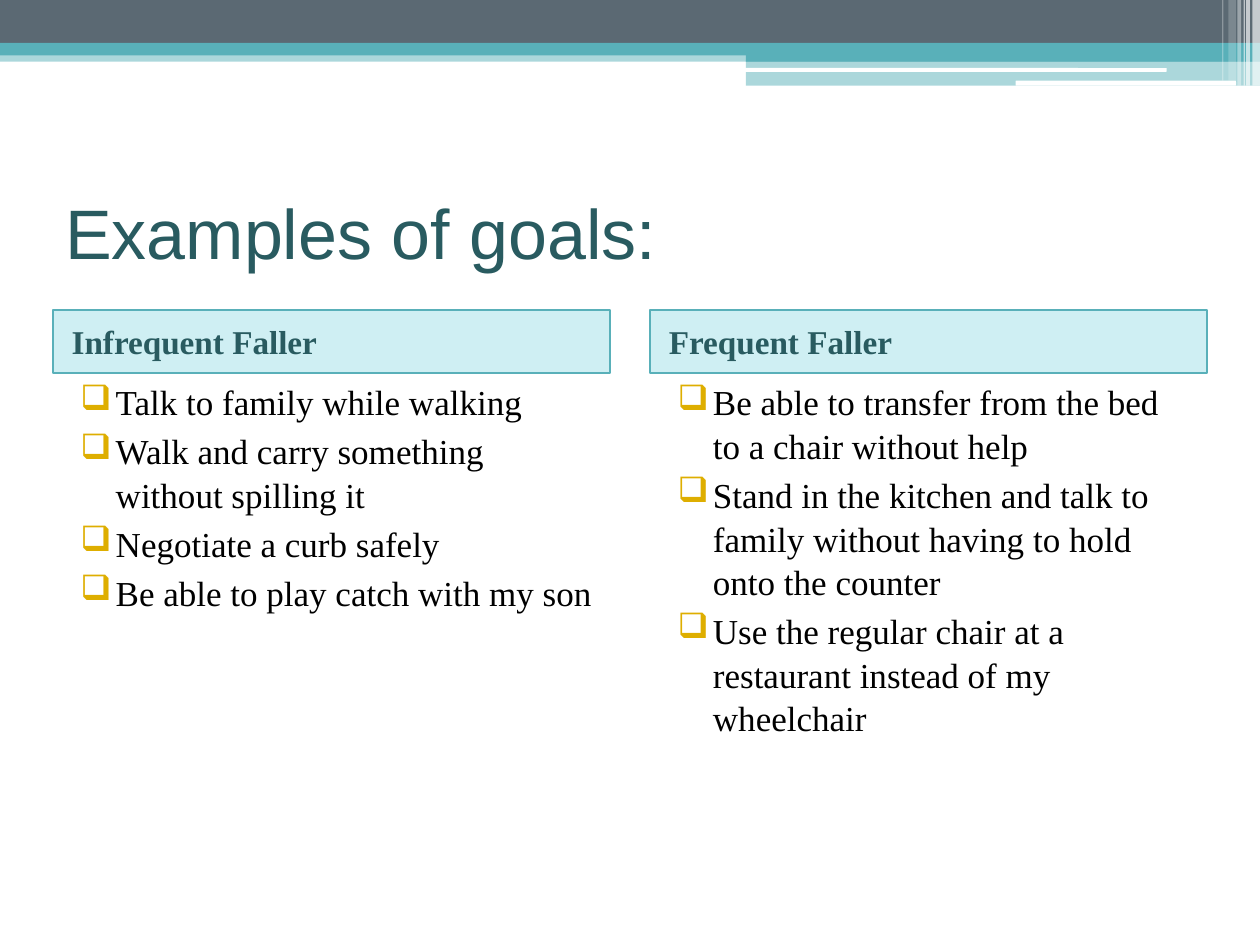
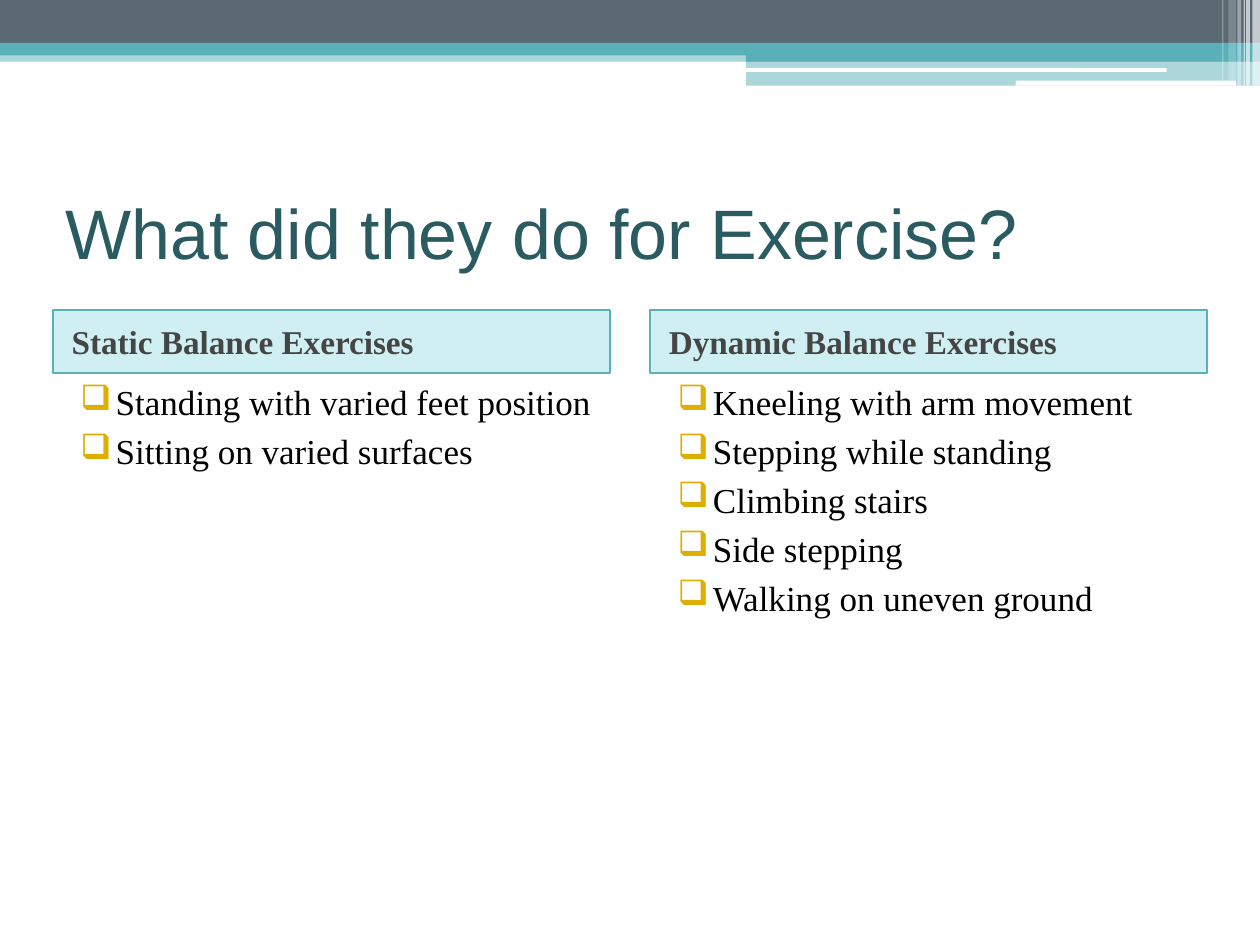
from lxml.etree import SubElement
from pptx import Presentation
from pptx.dml.color import RGBColor
from pptx.enum.shapes import MSO_SHAPE as SHAPE
from pptx.enum.text import MSO_ANCHOR as ANCHOR, PP_ALIGN as ALIGN
from pptx.oxml.ns import qn
from pptx.util import Inches, Pt

# Shared look
SLATE, TEAL, DARK_TEAL, AQUA = "5B6973", "59B0B9", "295B60", "41C3D1"
GOLD, GREY, BLACK, WHITE = "DEAE00", "454545", "000000", "FFFFFF"
SANS, SERIF = "Arial", "Times New Roman"
LEFT, COLUMN_WIDTH, COLUMN_STEP = 0.42, 4.42, 4.74

# Top bands, back to front: kind, left, top, width, height, colour, opacity %
BANDS = [
    (SHAPE.RECTANGLE, 0, 0.4, 10, 0.09, TEAL, 50),
    (SHAPE.RECTANGLE, 0, 0, 10, 0.34, SLATE, 100),
    (SHAPE.RECTANGLE, 0, 0.34, 10, 0.1, TEAL, 100),
    (SHAPE.RECTANGLE, 5.92, 0.39, 4.08, 0.1, TEAL, 100),
    (SHAPE.RECTANGLE, 5.92, 0.48, 4.08, 0.2, TEAL, 50),
    (SHAPE.ROUNDED_RECTANGLE, 5.91, 0.54, 3.35, 0.03, WHITE, 100),
    (SHAPE.ROUNDED_RECTANGLE, 8.06, 0.64, 1.75, 0.04, WHITE, 100),
]
# Pale stripes in the corner: left, width, height, opacity %
STRIPES = [(9.94, 0.06, 0.68, 65), (9.89, 0.03, 0.68, 65), (9.87, 0.01, 0.68, 60),
           (9.82, 0.03, 0.68, 40), (9.75, 0.06, 0.64, 20), (9.7, 0.01, 0.64, 30)]
BANDS += [(SHAPE.RECTANGLE, left, 0, width, height, WHITE, opacity)
          for left, width, height, opacity in STRIPES]

# Title, heading colour, columns of heading and points
SLIDES = [
    ("Examples of goals:", DARK_TEAL, [
        ("Infrequent Faller", [
            "Talk to family while walking",
            "Walk and carry something without spilling it",
            "Negotiate a curb safely",
            "Be able to play catch with my son"]),
        ("Frequent Faller", [
            "Be able to transfer from the bed to a chair without help",
            "Stand in the kitchen and talk to family without having to hold onto the counter",
            "Use the regular chair at a restaurant instead of my wheelchair"]),
    ]),
    ("What did they do for Exercise?", GREY, [
        ("Static Balance Exercises", [
            "Standing with varied feet position",
            "Sitting on varied surfaces"]),
        ("Dynamic Balance Exercises", [
            "Kneeling with arm movement",
            "Stepping while standing",
            "Climbing stairs",
            "Side stepping",
            "Walking on uneven ground"]),
    ]),
]


def add_block(slide, kind, left, top, width, height, color, opacity):
    block = slide.shapes.add_shape(kind, Inches(left), Inches(top), Inches(width), Inches(height))
    block.shadow.inherit = False
    block.line.fill.background()
    block.fill.solid()
    block.fill.fore_color.rgb = RGBColor.from_string(color)
    if opacity < 100:
        tint = block.fill._xPr.find(".//" + qn("a:srgbClr"))
        SubElement(tint, qn("a:alpha"), val=str(opacity * 1000))
    return block


def write(shape, text, font, size, color, anchor=ANCHOR.MIDDLE, bold=False):
    frame = shape.text_frame
    frame.word_wrap = True
    frame.vertical_anchor = anchor
    frame.text = text
    for paragraph in frame.paragraphs:
        paragraph.alignment = ALIGN.LEFT
        for run in paragraph.runs:
            run.font.name, run.font.size, run.font.bold = font, Pt(size), bold
            run.font.color.rgb = RGBColor.from_string(color)
    return frame.paragraphs


deck = Presentation()
deck.slide_width, deck.slide_height = Inches(10), Inches(7.5)

for title, heading_color, columns in SLIDES:
    slide = deck.slides.add_slide(deck.slide_layouts[6])

    # Bands and title
    for band in BANDS:
        add_block(slide, *band)
    title_box = slide.shapes.add_textbox(Inches(LEFT), Inches(1.25), Inches(9.17), Inches(1.17))
    write(title_box, title, SANS, 40, DARK_TEAL)

    for index, (heading, points) in enumerate(columns):
        left = LEFT + index * COLUMN_STEP

        # Column heading
        header = add_block(slide, SHAPE.RECTANGLE, left, 2.46, COLUMN_WIDTH, 0.5, AQUA, 25)
        header.line.color.rgb = RGBColor.from_string(TEAL)
        header.line.width = Pt(1)
        for paragraph in write(header, heading, SERIF, 19, heading_color, bold=True):
            paragraph.space_before = Pt(3)
            paragraph._p.get_or_add_pPr().set("marL", str(Inches(0.05)))

        # Column points
        listing = slide.shapes.add_textbox(Inches(left), Inches(2.96),
                                           Inches(COLUMN_WIDTH), Inches(4.25))
        for paragraph in write(listing, "\n".join(points), SERIF, 20, BLACK, ANCHOR.TOP):
            paragraph.space_before = Pt(3)
            paragraph.line_spacing = 1.04
            props = paragraph._p.get_or_add_pPr()
            props.set("marL", str(Inches(0.4)))
            props.set("indent", str(Inches(-0.28)))
            SubElement(SubElement(props, qn("a:buClr")), qn("a:srgbClr"), val=GOLD)
            SubElement(props, qn("a:buChar"), char="❑")

deck.save("out.pptx")
